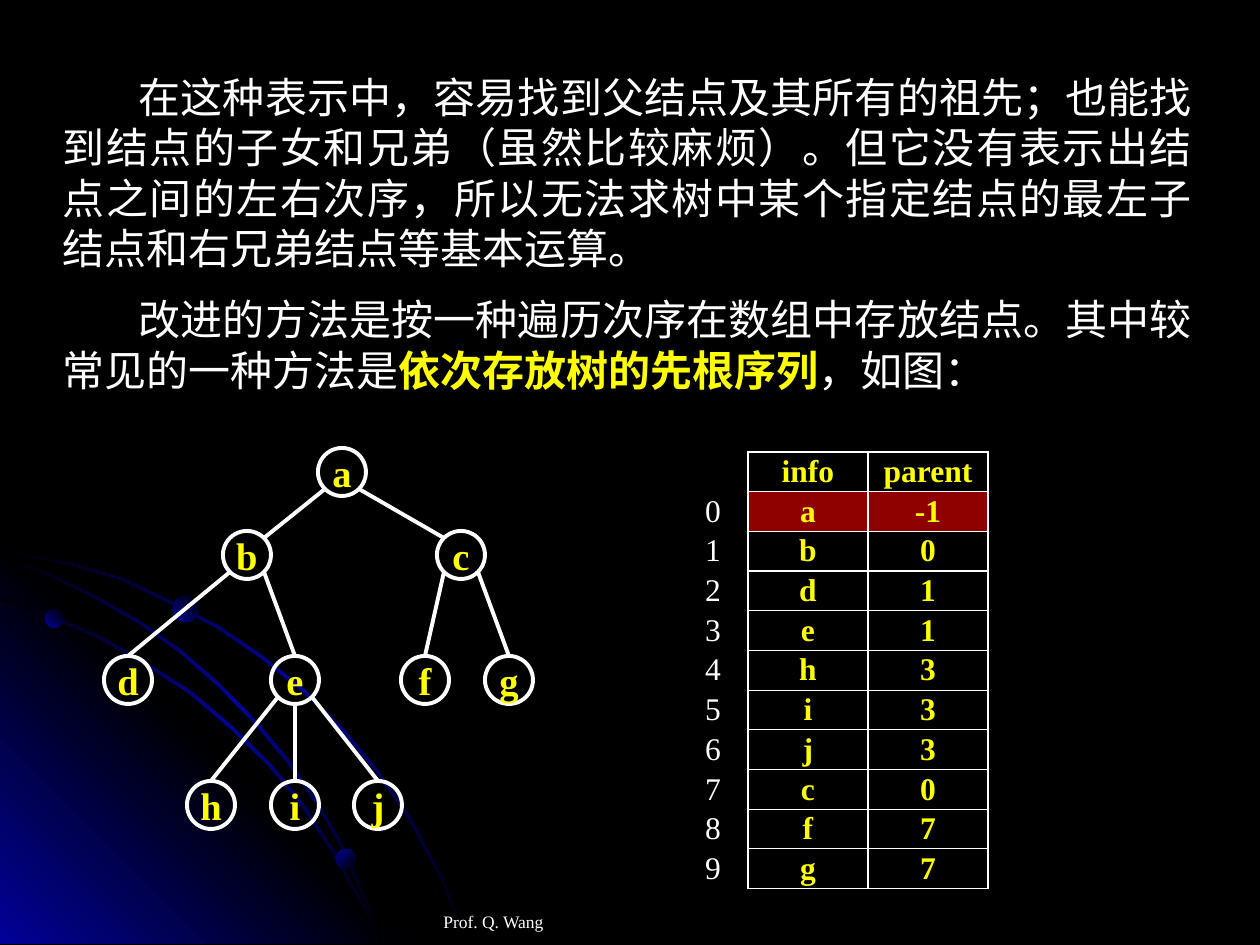
from lxml import etree
from pptx import Presentation
from pptx import util as u
from pptx.dml.color import RGBColor
from pptx.enum import shapes, text
from pptx.oxml import parse_xml
from pptx.oxml.ns import nsdecls, qn

PX = 914400 / 126
WIDTH, HEIGHT = 1260, 945
FONT = "Times New Roman"
WHITE, YELLOW, BLACK, BLUE, RED = "FFFFFF", "FFFF00", "000000", "010199", "CC0000"

ARCS = [
    [(0, 548), (36, 556), (72, 563), (123, 578), (171, 601), (219, 626), (263, 656), (305, 690),
     (343, 728), (378, 770), (410, 816), (427, 848), (444, 879), (456, 911), (469, 944)],
    [(0, 598), (52, 615), (100, 636), (147, 663), (192, 692), (232, 726), (271, 764), (305, 806),
     (335, 852), (360, 897), (373, 920), (382, 944)],
    [(0, 557), (49, 573), (96, 596), (140, 621), (181, 650), (220, 684), (257, 722), (289, 760),
     (320, 805), (339, 838), (355, 873), (370, 907), (382, 944)],
]
BALLS = [(45, 609, 19, 315), (336, 849, 20, 45), (173, 596, 26, 315)]

PARAGRAPHS = [
    [("在这种表示中，容易找到父结点及其所有的祖先；也能找到结点的子女和兄弟（虽然比较麻烦）。"
      "但它没有表示出结点之间的左右次序，所以无法求树中某个指定结点的最左子结点和右兄弟结点等基本运算。", False)],
    [("改进的方法是按一种遍历次序在数组中存放结点。其中较常见的一种方法是", False),
     ("依次存放树的先根序列", True), ("，如图：", False)],
]

NODE = 48
CENTRES = {"a": (238, 24), "b": (143, 107), "c": (357, 107), "d": (24, 232), "e": (191, 232),
           "f": (321, 232), "g": (405, 232), "h": (107, 357), "i": (191, 357), "j": (274, 357)}
CHILDREN = {"a": "bc", "b": "de", "c": "fg", "e": "hij"}
PREORDER = [("a", "-1"), ("b", "0"), ("d", "1"), ("e", "1"), ("h", "3"),
            ("i", "3"), ("j", "3"), ("c", "0"), ("f", "7"), ("g", "7")]


def px(n):
    return u.Emu(round(n * PX))


def rgb(colour):
    return RGBColor.from_string(colour)


def style(r, size, colour, bold=False):
    r.font.name, r.font.size, r.font.bold = FONT, u.Pt(size), bold
    r.font.color.rgb = rgb(colour)


def gradient(sp, colours, angle):
    """Fill a borderless shape with evenly spaced colours."""
    sp.shadow.inherit = False
    sp.line.fill.background()
    stops = "".join(f'<a:gs pos="{round(100000 * k / (len(colours) - 1))}"><a:srgbClr val="{c}"/></a:gs>'
                    for k, c in enumerate(colours))
    fill = parse_xml(f'<a:gradFill {nsdecls("a")} rotWithShape="1"><a:gsLst>{stops}</a:gsLst>'
                     f'<a:lin ang="{angle * 60000}" scaled="0"/></a:gradFill>')
    sp._element.spPr.find(qn("a:ln")).addprevious(fill)


def add_outline(parent, points):
    builder = parent.build_freeform(*points[0], scale=PX)
    builder.add_line_segments(points[1:], close=True)
    return builder.convert_to_shape()


def add_backdrop(slide):
    group = slide.shapes.add_group_shape().shapes
    corner = add_outline(group, [(0, 538), (406, 944), (0, 944)])
    gradient(corner, [BLUE, BLACK, BLUE], 315)
    for arc in ARCS:
        inner = [(max(x - 2, 0), min(y + 2, 944)) for x, y in reversed(arc)]
        gradient(add_outline(group, arc + inner), [BLACK, BLUE, BLACK], 45)
    for x, y, size, angle in BALLS:
        ball = group.add_shape(shapes.MSO_SHAPE.OVAL, px(x), px(y), px(size), px(size))
        gradient(ball, [BLUE, BLACK], angle)


def add_body(slide, x, y, w, h):
    body = slide.placeholders[1]
    body.left, body.top, body.width, body.height = map(px, (x, y, w, h))
    tf = body.text_frame
    tf.auto_size = text.MSO_AUTO_SIZE.NONE
    tf.vertical_anchor = text.MSO_ANCHOR.TOP
    for k, runs in enumerate(PARAGRAPHS):
        p = tf.add_paragraph() if k else tf.paragraphs[0]
        p.alignment, p.space_before = text.PP_ALIGN.JUSTIFY, u.Pt(12)
        pPr = p._p.get_or_add_pPr()
        pPr.set("marL", "0")
        pPr.set("indent", str(px(76)))
        etree.SubElement(pPr, qn("a:buNone"))
        for words, key in runs:
            r = p.add_run()
            r.text = words
            style(r, 24, YELLOW if key else WHITE, key)


def add_author(slide, x, y, w, h):
    tf = slide.shapes.add_textbox(*map(px, (x, y, w, h))).text_frame
    tf.word_wrap, tf.margin_bottom = True, 0
    tf.vertical_anchor = text.MSO_ANCHOR.BOTTOM
    tf.text = "Prof. Q. Wang"
    style(tf.paragraphs[0].runs[0], 10, WHITE)


def add_node(group, label, x, y):
    sp = group.add_shape(shapes.MSO_SHAPE.OVAL, px(x - NODE / 2), px(y - NODE / 2), px(NODE), px(NODE))
    sp.shadow.inherit = False
    sp.fill.background()
    sp.line.color.rgb, sp.line.width = rgb(WHITE), u.Pt(2.25)
    tf = sp.text_frame
    tf.word_wrap, tf.vertical_anchor = False, text.MSO_ANCHOR.MIDDLE
    tf.text = label
    tf.paragraphs[0].alignment = text.PP_ALIGN.CENTER
    style(tf.paragraphs[0].runs[0], 22, YELLOW, True)


def add_edge(group, start, end, near_root):
    """Join two node centres, from rim to rim."""
    (x1, y1), (x2, y2) = start, end
    side = (x2 > x1) - (x2 < x1)
    corner = 17
    x1, y1 = (x1 + side * corner, y1 + corner) if side else (x1, y1 + NODE / 2)
    x2, y2 = (x2 - side * corner, y2 - corner) if near_root else (x2, y2 - NODE / 2)
    line = group.add_connector(shapes.MSO_CONNECTOR.STRAIGHT, px(x1), px(y1), px(x2), px(y2))
    line.line.color.rgb, line.line.width = rgb(WHITE), u.Pt(2.25)
    etree.SubElement(line._element.spPr, qn("a:effectLst"))


def add_tree(slide, x, y):
    group = slide.shapes.add_group_shape().shapes
    centres = {name: (x + cx, y + cy) for name, (cx, cy) in CENTRES.items()}
    for name, centre in centres.items():
        add_node(group, name, *centre)
    for name, children in CHILDREN.items():
        for child in children:
            add_edge(group, centres[name], centres[child], name == "a")


def set_borders(cell, visible):
    tcPr = cell._tc.get_or_add_tcPr()
    paint = f'<a:solidFill><a:srgbClr val="{WHITE}"/></a:solidFill>' if visible else "<a:noFill/>"
    for k, side in enumerate("LRTB"):
        tcPr.insert(k, parse_xml(f'<a:ln{side} {nsdecls("a")} w="9525">{paint}</a:ln{side}>'))


def add_array(slide, x, y, w, h):
    rows = [("", "info", "parent")] + [(str(k), *row) for k, row in enumerate(PREORDER)]
    table = slide.shapes.add_table(len(rows), 3, *map(px, (x, y, w, h))).table
    table.first_row = table.horz_banding = False
    for column, width in zip(table.columns, (w - 240, 120, 120)):
        column.width = px(width)
    for i, row in enumerate(rows):
        table.rows[i].height = px(h / len(rows))
        for j, value in enumerate(row):
            cell = table.cell(i, j)
            cell.margin_left = cell.margin_top = cell.margin_bottom = 0
            cell.margin_right = 0 if j else px(10)
            cell.vertical_anchor = text.MSO_ANCHOR.MIDDLE
            if i == 1 and j:
                cell.fill.solid()
                cell.fill.fore_color.rgb = rgb(RED)
                tint = cell._tc.tcPr.find(".//" + qn("a:srgbClr"))
                etree.SubElement(tint, qn("a:alpha")).set("val", "70000")
            else:
                cell.fill.background()
            set_borders(cell, j > 0)
            p = cell.text_frame.paragraphs[0]
            p.text, p.alignment = value, text.PP_ALIGN.CENTER
            for r in p.runs:
                style(r, 18, YELLOW if j else WHITE, j > 0)


def main():
    prs = Presentation()
    prs.slide_width, prs.slide_height = px(WIDTH), px(HEIGHT)
    slide = prs.slides.add_slide(prs.slide_layouts[1])
    title = slide.shapes.title._element
    title.getparent().remove(title)
    slide.background.fill.solid()
    slide.background.fill.fore_color.rgb = rgb(BLACK)
    add_backdrop(slide)
    add_author(slide, 431, 869, 399, 63)
    add_body(slide, 50, 65, 1155, 344)
    add_tree(slide, 104, 448)
    add_array(slide, 688, 452, 300, 437)
    prs.save("out.pptx")


if __name__ == "__main__":
    main()
